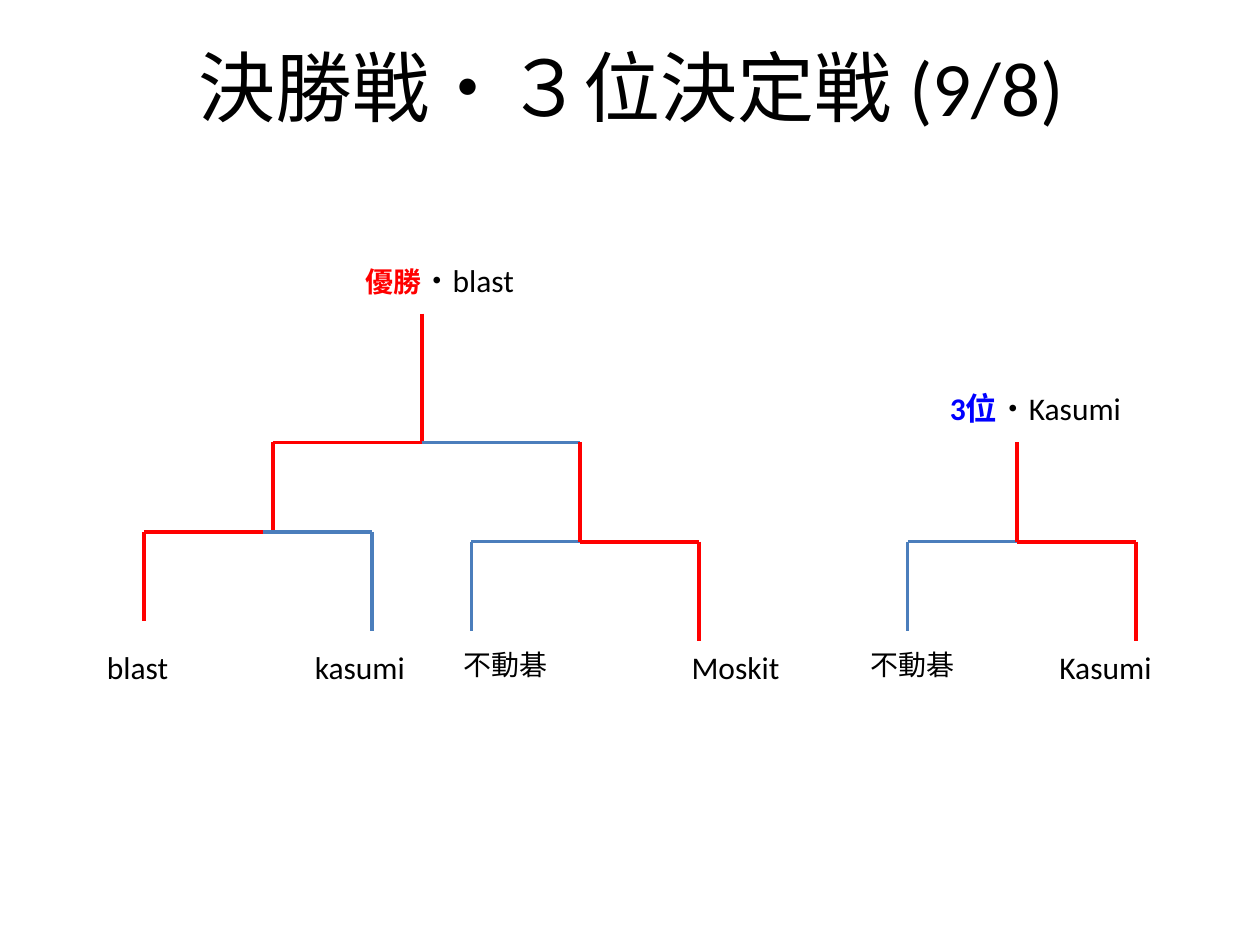
from dataclasses import dataclass

from lxml import etree
from pptx import Presentation
from pptx.dml.color import RGBColor
from pptx.enum.shapes import MSO_CONNECTOR
from pptx.enum.text import MSO_ANCHOR, MSO_AUTO_SIZE, PP_ALIGN
from pptx.oxml.ns import qn
from pptx.util import Inches, Pt

STRAIGHT = MSO_CONNECTOR.STRAIGHT
LEFT, CENTER = PP_ALIGN.LEFT, PP_ALIGN.CENTER
TOP, MIDDLE = MSO_ANCHOR.TOP, MSO_ANCHOR.MIDDLE
NO_RESIZE, GROW = MSO_AUTO_SIZE.NONE, MSO_AUTO_SIZE.SHAPE_TO_FIT_TEXT

SLIDE_W, SLIDE_H = Inches(10), Inches(7.5)
CELL = SLIDE_W / 127  # square bracket grid, 127 columns across
COL_SHIFT, ROW_SHIFT = 0.5, 0.6


@dataclass(frozen=True)
class Theme:
    font: str = "Calibri"
    text: str = "000000"
    win: str = "FF0000"
    lose: str = "4B7EBC"
    third: str = "0000FF"
    title: int = 44
    latin: int = 18
    kanji: int = 16
    thick: float = 2.25
    thin: float = 1.5


THEME = Theme()


@dataclass(frozen=True)
class Run:
    text: str
    size: int = THEME.latin
    color: str = THEME.text
    bold: bool = False


@dataclass(frozen=True)
class Label:
    """A text box; lengths are percentages of the slide's size."""
    x: float
    y: float
    w: float
    h: float
    runs: tuple[Run, ...]
    wrap: bool = False
    align: PP_ALIGN = LEFT
    anchor: MSO_ANCHOR = TOP
    auto_size: MSO_AUTO_SIZE = GROW


@dataclass(frozen=True)
class Branch:
    """A bracket line between grid points (column, row)."""
    start: tuple[int, int]
    end: tuple[int, int]
    color: str = THEME.win
    width: float = THEME.thick


def add_label(slide, label: Label) -> None:
    sp = slide.shapes.add_textbox(
        int(SLIDE_W * label.x / 100), int(SLIDE_H * label.y / 100),
        int(SLIDE_W * label.w / 100), int(SLIDE_H * label.h / 100))
    tf = sp.text_frame
    frame = {"word_wrap": label.wrap, "auto_size": label.auto_size,
             "vertical_anchor": label.anchor}
    for name, value in frame.items():
        setattr(tf, name, value)
    p = tf.paragraphs[0]
    p.alignment = label.align
    for run in label.runs:
        r = p.add_run()
        r.text = run.text
        style = {"name": THEME.font, "size": Pt(run.size), "bold": run.bold}
        for name, value in style.items():
            setattr(r.font, name, value)
        r.font.color.rgb = RGBColor.from_string(run.color)
        # Same typeface for East Asian characters, so the dot stays narrow
        etree.SubElement(r._r.rPr, qn("a:ea"), typeface=THEME.font)


def grid_point(point: tuple[int, int]) -> tuple[int, int]:
    col, row = point
    return int((col + COL_SHIFT) * CELL), int((row + ROW_SHIFT) * CELL)


def add_branch(slide, branch: Branch) -> None:
    line = slide.shapes.add_connector(
        STRAIGHT, *grid_point(branch.start), *grid_point(branch.end))
    line.line.color.rgb = RGBColor.from_string(branch.color)
    line.line.width = Pt(branch.width)
    etree.SubElement(line._element.spPr, qn("a:effectLst"))


def right_pair(center: int, left: int, right: int) -> list[Branch]:
    """A match won by the player on the right."""
    top, joint, left_end, right_end = 44, 54, 63, 64
    return [
        Branch((left, joint), (left, left_end), THEME.lose, THEME.thin),
        Branch((center, joint), (left, joint), THEME.lose, THEME.thin),
        Branch((right, joint), (right, right_end)),
        Branch((center, joint), (right, joint)),
        Branch((center, top), (center, joint)),
    ]


BRANCHES = [
    # Final
    Branch((42, 31), (42, 44)),
    Branch((27, 44), (58, 44), THEME.lose),
    Branch((27, 44), (27, 53)),
    Branch((27, 44), (42, 44)),
    # Left semifinal
    Branch((14, 53), (37, 53), THEME.lose),
    Branch((14, 53), (14, 62)),
    Branch((14, 53), (26, 53)),
    Branch((37, 53), (37, 63), THEME.lose),
    # Right semifinal and third-place match
    *right_pair(58, 47, 70),
    *right_pair(102, 91, 114),
]

PLAYER_Y, LATIN_H, KANJI_H = 67.87, 5.33, 4.93


def player(x: float, w: float, name: str, wrap: bool = False) -> Label:
    return Label(x, PLAYER_Y, w, LATIN_H, (Run(name),), wrap)


def kanji_player(x: float) -> Label:
    return Label(x, PLAYER_Y, 8.8, KANJI_H, (Run("不動碁", THEME.kanji),))


LABELS = [
    # Title
    Label(5.1, 2.8, 90, 12.53, (Run("決勝戦・３位決定戦 (9/8)", THEME.title),),
          True, CENTER, MIDDLE, NO_RESIZE),
    # Results, wide enough to stay on one line
    Label(28, 26.93, 14.5, LATIN_H,
          (Run("優勝", THEME.kanji, THEME.win, True), Run("・blast")), True),
    Label(74.4, 40.53, 17.5, LATIN_H,
          (Run("3位", color=THEME.third, bold=True), Run("・Kasumi")), True),
    # Players
    player(7.5, 6.9, "blast"),
    player(24, 9.2, "kasumi"),
    kanji_player(35.8),
    player(53.9, 9, "Moskit"),
    kanji_player(68.1),
    player(83.1, 9.4, "Kasumi", True),
]


def main() -> None:
    prs = Presentation()
    prs.slide_width, prs.slide_height = SLIDE_W, SLIDE_H
    slide = prs.slides.add_slide(prs.slide_layouts[6])
    for branch in BRANCHES:
        add_branch(slide, branch)
    for label in LABELS:
        add_label(slide, label)
    prs.save("out.pptx")


if __name__ == "__main__":
    main()
